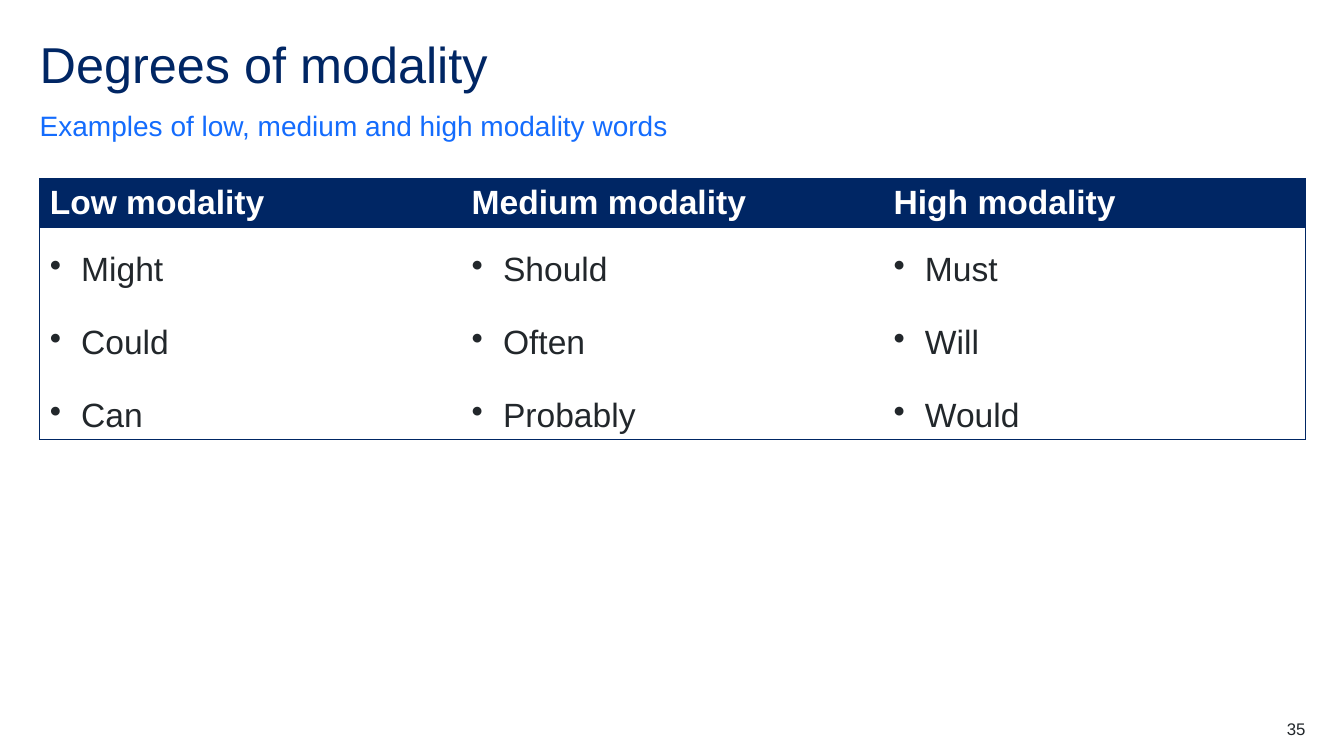
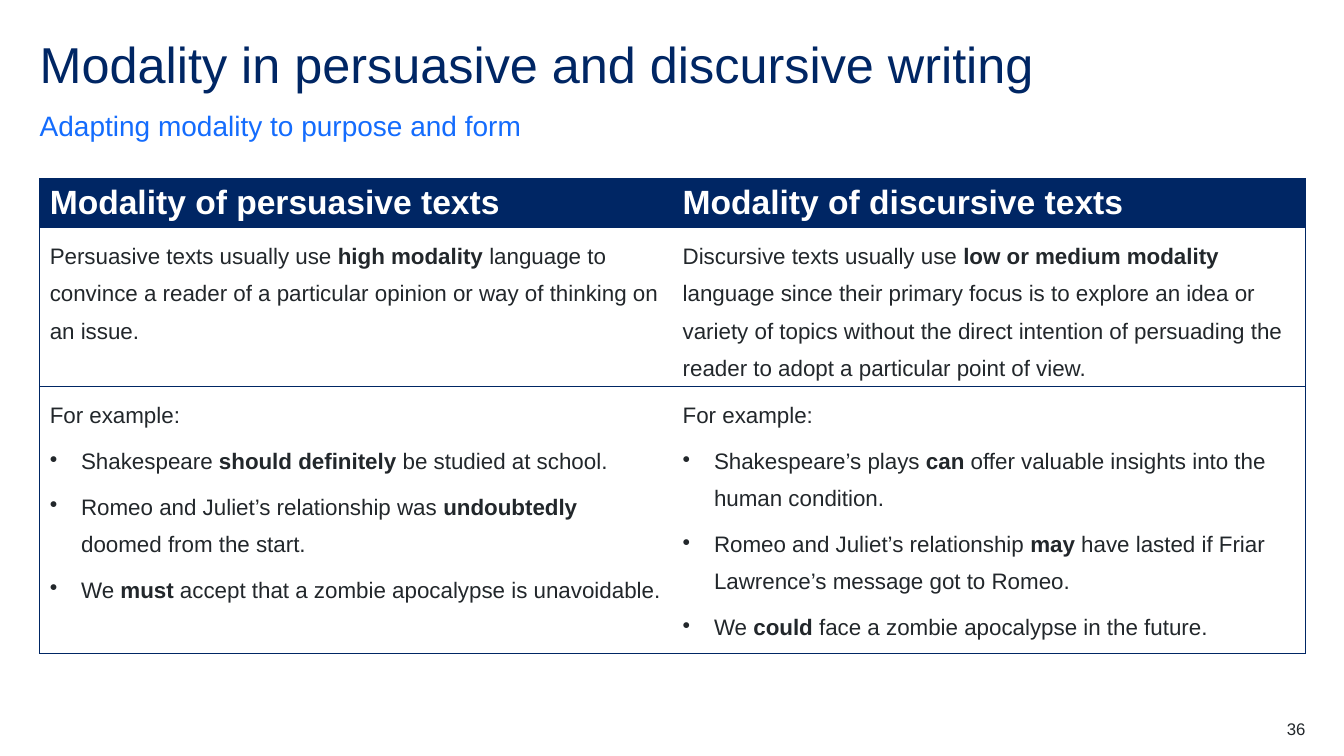
from lxml import etree
from pptx import Presentation
from pptx.dml.color import RGBColor as Rgb
from pptx.enum.text import MSO_ANCHOR as Anchor, MSO_AUTO_SIZE as Fit, PP_ALIGN as Align
from pptx.oxml.ns import qn
from pptx.util import Cm, Pt

COLORS = {"navy": "002664", "blue": "146CFD", "ink": "22272B", "white": "FFFFFF"}
FONT = "Arial"
LEFT, WIDTH = 1, 31.9
HEAD = 1.22
HANG = Cm(0.79)

SLIDES = [
    {
        "number": 35,
        "title": "Degrees of modality",
        "lead": "Examples of low, medium and high modality words",
        "heads": ["Low modality", "Medium modality", "High modality"],
        "rows": [
            [
                ["• Might", "• Could", "• Can"],
                ["• Should", "• Often", "• Probably"],
                ["• Must", "• Will", "• Would"],
            ],
        ],
        "heights": [5.3],
        "size": 24,
        "after": 12,
    },
    {
        "number": 36,
        "title": "Modality in persuasive and discursive writing",
        "lead": "Adapting modality to purpose and form",
        "heads": ["Modality of persuasive texts", "Modality of discursive texts"],
        "rows": [
            [
                ["Persuasive texts usually use **high modality **language to convince "
                 "a reader of a particular opinion or way of thinking on an issue."],
                ["Discursive texts usually use **low or medium modality **language "
                 "since their primary focus is to explore an idea or variety of topics "
                 "without the direct intention of persuading the reader to adopt a "
                 "particular point of view."],
            ],
            [
                ["For example:",
                 "• Shakespeare **should definitely **be studied at school.",
                 "• Romeo and Juliet’s relationship was **undoubtedly** doomed from the start.",
                 "• We **must** accept that a zombie apocalypse is unavoidable."],
                ["For example:",
                 "• Shakespeare’s plays **can** offer valuable insights into the human condition.",
                 "• Romeo and Juliet’s relationship **may** have lasted if Friar "
                 "Lawrence’s message got to Romeo.",
                 "• We **could** face a zombie apocalypse in the future."],
            ],
        ],
        "heights": [4, 6.74],
        "size": 16,
        "after": 6,
    },
]


def color(name):
    return Rgb.from_string(COLORS[name])


def style(para, size, tint, bold=None):
    font = para.font
    font.name, font.size, font.bold = FONT, Pt(size), bold
    font.color.rgb = color(tint)


def space(para, line, after=0):
    para.line_spacing = line
    para.space_before, para.space_after = Pt(0), Pt(after)


def bullet(para, char=None):
    """Hang the paragraph on a bullet, or clear an inherited one."""
    props = para._p.get_or_add_pPr()
    props.set("marL", str(HANG if char else 0))
    props.set("indent", str(-HANG if char else 0))
    mark = etree.Element(qn("a:buChar" if char else "a:buNone"))
    if char:
        mark.set("char", char)
    props.insert_element_before(mark, "a:tabLst", "a:defRPr", "a:extLst")


def place(shape, left, top, width, height):
    shape.left, shape.top = Cm(left), Cm(top)
    shape.width, shape.height = Cm(width), Cm(height)


def fill_box(shape, text, size, tint, anchor=Anchor.TOP, align=Align.LEFT):
    """Put one line of text in a frame without margins."""
    frame = shape.text_frame
    frame.text = text
    frame.word_wrap, frame.auto_size = True, Fit.NONE
    frame.vertical_anchor = anchor
    frame.margin_left = frame.margin_right = 0
    frame.margin_top = frame.margin_bottom = 0
    para = frame.paragraphs[0]
    para.alignment = align
    style(para, size, tint)
    return para


def add_title(slide, text):
    title = slide.shapes.title
    place(title, LEFT, 1, WIDTH, 1.52)
    space(fill_box(title, text, 36, "navy"), 0.9)


def add_lead(slide, text):
    body = slide.placeholders[1]
    place(body, LEFT, 2.72, WIDTH, 0.86)
    para = fill_box(body, text, 20, "blue", Anchor.BOTTOM)
    space(para, 1.5, 12)
    bullet(para)


def add_number(slide, number):
    box = slide.shapes.add_textbox(Cm(LEFT + WIDTH - 2), Cm(18.1), Cm(2), Cm(0.51))
    fill_box(box, str(number), 12, "ink", align=Align.RIGHT)


def set_edges(cell, shown):
    """Rule the named sides of the cell and hide the others."""
    props = cell._tc.get_or_add_tcPr()
    for side in "LRTB":
        line = etree.SubElement(props, qn("a:ln" + side), w=str(Pt(0.5)))
        if side in shown:
            paint = etree.SubElement(line, qn("a:solidFill"))
            etree.SubElement(paint, qn("a:srgbClr"), val=COLORS["navy"])
        else:
            etree.SubElement(line, qn("a:noFill"))


def add_runs(para, text):
    """Write the text, with the parts between double asterisks in bold."""
    for index, part in enumerate(text.split("**")):
        run = para.add_run()
        run.text = part
        if index % 2:
            run.font.bold = True


def fill_cell(cell, lines, size, after):
    frame = cell.text_frame
    for index, line in enumerate(lines):
        para = frame.add_paragraph() if index else frame.paragraphs[0]
        add_runs(para, line.removeprefix("• "))
        style(para, size, "ink")
        space(para, 1.5, after)
        if line.startswith("• "):
            bullet(para, "•")


def add_grid(slide, data):
    heads, heights = data["heads"], [HEAD, *data["heights"]]
    count = len(heads)
    table = slide.shapes.add_table(
        len(heights), count, Cm(LEFT), Cm(4.5), Cm(WIDTH), Cm(sum(heights))
    ).table
    table.horz_banding = False
    for row, height in zip(table.rows, heights):
        row.height = Cm(height)
    for r, row in enumerate([heads, *data["rows"]]):
        for c, content in enumerate(row):
            cell = table.cell(r, c)
            sides = "TB" + "L" * (c == 0) + "R" * (c == count - 1)
            set_edges(cell, sides)
            cell.fill.solid()
            cell.fill.fore_color.rgb = color("white" if r else "navy")
            if r:
                fill_cell(cell, content, data["size"], data["after"])
            else:
                cell.text = content
                style(cell.text_frame.paragraphs[0], 24, "white", True)


def main():
    deck = Presentation()
    deck.slide_width, deck.slide_height = Cm(33.87), Cm(19.05)
    for data in SLIDES:
        slide = deck.slides.add_slide(deck.slide_layouts[1])
        add_title(slide, data["title"])
        add_lead(slide, data["lead"])
        add_grid(slide, data)
        add_number(slide, data["number"])
    deck.save("out.pptx")


if __name__ == "__main__":
    main()
